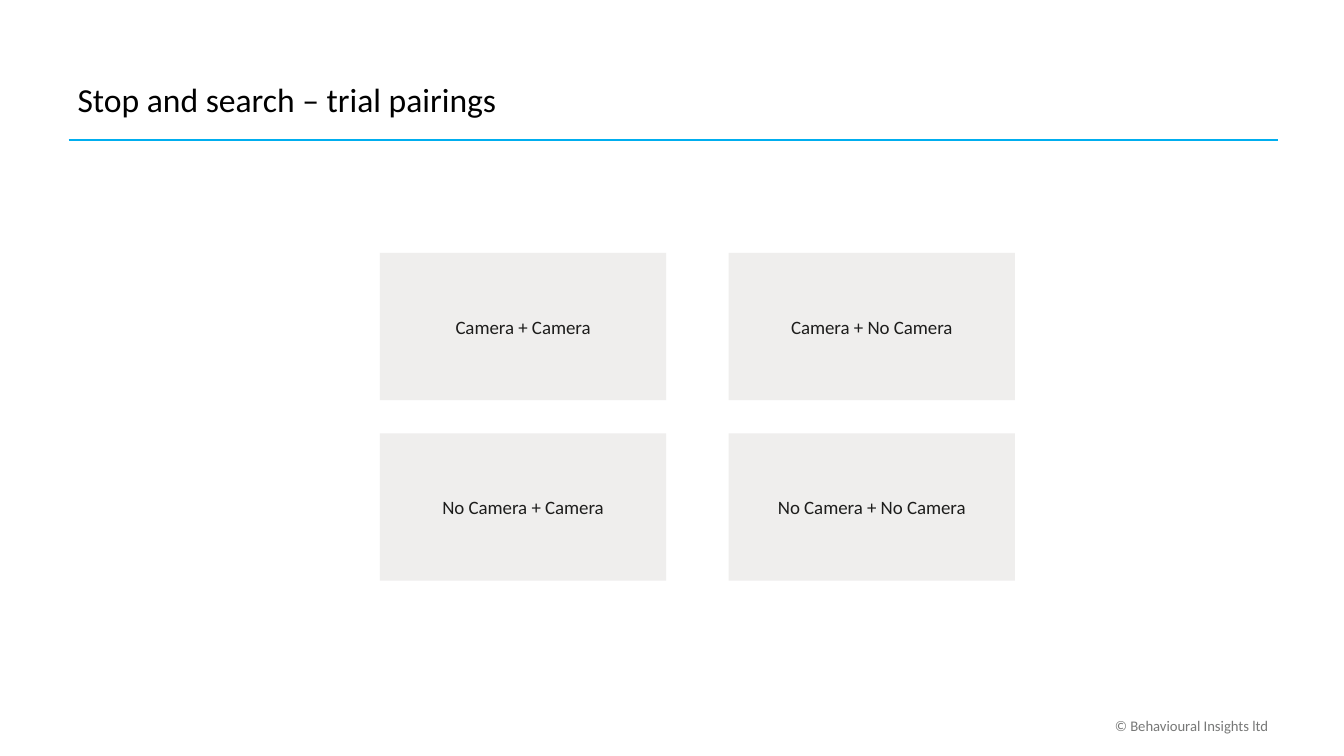
from itertools import product

from lxml import etree
from pptx import Presentation
from pptx.dml.color import RGBColor
from pptx.enum import shapes, text
from pptx.oxml.ns import qn
from pptx.util import Pt

FONT = "Calibri"
ARMS = ["Camera", "No Camera"]


def colour(hex_code):
    return RGBColor.from_string(hex_code)


def write(shape, words, size, hex_code, align, anchor):
    frame = shape.text_frame
    frame.text = words
    frame.word_wrap = True
    frame.vertical_anchor = anchor
    paragraph = frame.paragraphs[0]
    paragraph.alignment = align
    font = paragraph.runs[0].font
    font.name, font.size = FONT, Pt(size)
    font.color.rgb = colour(hex_code)


def add_heading(slide, words, left, top, width, height):
    """Place the title in the box, with the rule just below it."""
    title = slide.shapes.add_textbox(Pt(left), Pt(top), Pt(676), Pt(height))
    write(title, words, 24, "000000", text.PP_ALIGN.LEFT, text.MSO_ANCHOR.BOTTOM)

    rule_y = Pt(top + height + 11.5)
    rule = slide.shapes.add_connector(
        shapes.MSO_CONNECTOR.STRAIGHT, Pt(left + 0.7), rule_y, Pt(left + width), rule_y)
    rule.line.color.rgb = colour("00AEEF")
    rule.line.width = Pt(1.5)
    etree.SubElement(rule._element.spPr, qn("a:effectLst"))


def add_pairings(slide, left, top, width, height):
    """Fill the box with one card for each pairing of trial arms."""
    card_width, card_height = 204.5, 105.1
    column_step = width - card_width
    row_step = height - card_height
    for (row, first), (column, second) in product(enumerate(ARMS), repeat=2):
        card = slide.shapes.add_shape(
            shapes.MSO_SHAPE.RECTANGLE,
            Pt(left + column * column_step), Pt(top + row * row_step),
            Pt(card_width), Pt(card_height))
        card.shadow.inherit = False
        card.fill.solid()
        card.fill.fore_color.rgb = colour("EFEEED")
        card.line.fill.background()
        write(card, f"{first} + {second}", 13.5, "1D1D1C",
              text.PP_ALIGN.CENTER, text.MSO_ANCHOR.MIDDLE)


def add_footer(slide, words, left, top, width, height):
    footer = slide.shapes.add_textbox(Pt(left), Pt(top), Pt(width), Pt(height))
    write(footer, words, 10.5, "777877", text.PP_ALIGN.RIGHT, text.MSO_ANCHOR.TOP)


def main():
    deck = Presentation()
    deck.slide_width, deck.slide_height = Pt(960), Pt(540)
    slide = deck.slides.add_slide(deck.slide_layouts[6])
    add_footer(slide, "© Behavioural Insights ltd", 604.8, 508.3, 308.2, 20.2)
    add_heading(slide, "Stop and search – trial pairings", 48.3, 21.6, 864.7, 67)
    add_pairings(slide, 271.4, 180.7, 453.6, 234)
    deck.save("out.pptx")


if __name__ == "__main__":
    main()
